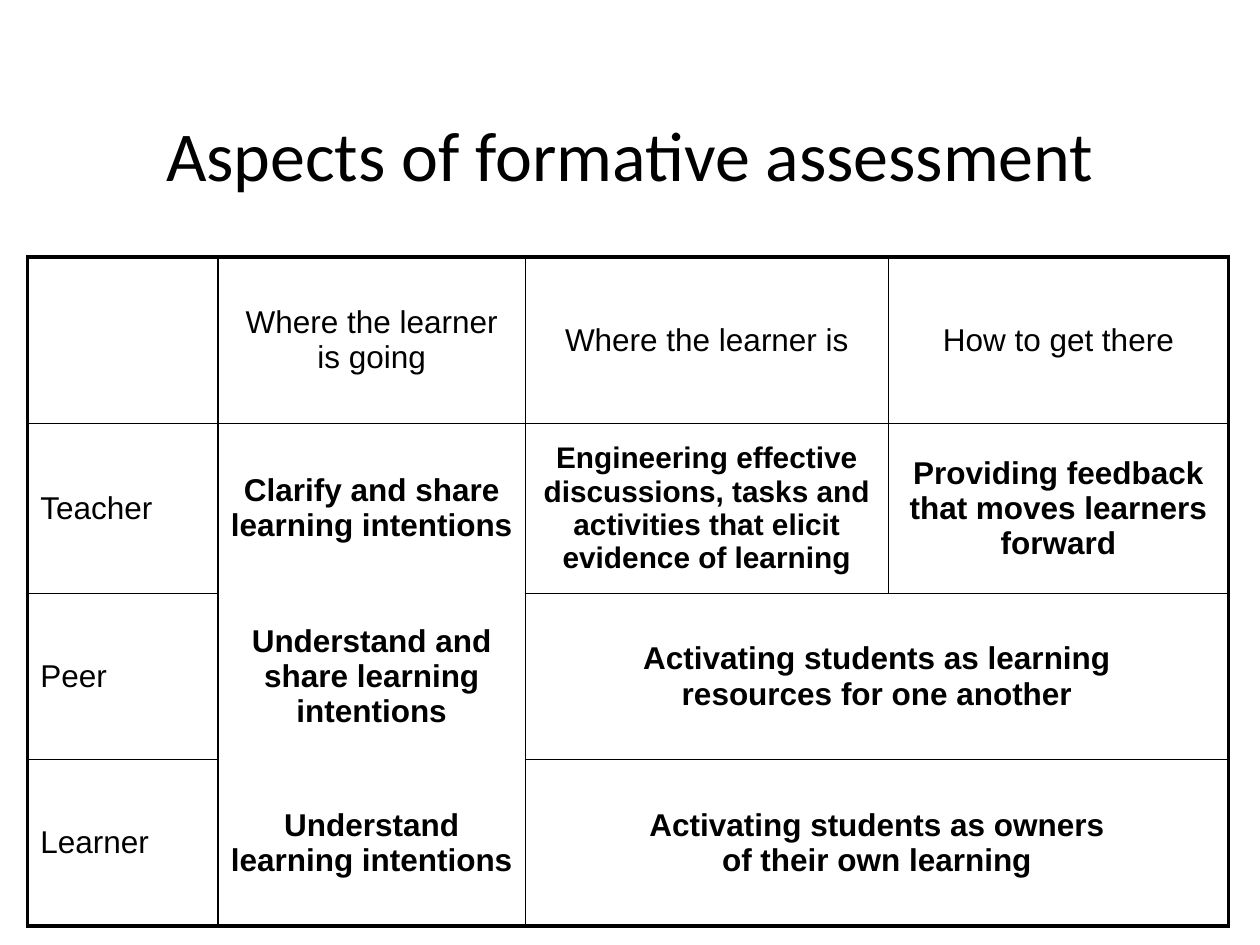
from lxml.etree import SubElement
from pptx import Presentation
from pptx.dml.color import RGBColor
from pptx.enum.text import MSO_ANCHOR as Anchor, PP_ALIGN as Align
from pptx.oxml.ns import qn
from pptx.util import Inches, Pt

BLACK, WHITE = "000000", "FFFFFF"
OUTER, INNER = 2.25, 1
COLUMN_WIDTHS = [1.51, 2.44, 2.88, 2.7]
ROW_HEIGHTS = [1.32, 1.35, 1.32, 1.32]
INTENTIONS_COLUMN = 1

# Each cell holds paragraphs; "\n" is a line break inside one paragraph
ASPECTS = [
    [[], ["Where the learner is going"], ["Where the learner is"],
     ["How to get there"]],
    [["Teacher"], ["Clarify and share learning intentions"],
     ["Engineering effective discussions, tasks and activities that elicit "
      "evidence of learning"],
     ["Providing feedback that moves learners forward"]],
    [["Peer"], ["Understand and share learning intentions"],
     ["Activating students as learning", "resources for one another"], []],
    [["Learner"], ["Understand learning intentions"],
     ["Activating students as owners\nof their own learning"], []],
]
WIDE_ROWS = (2, 3)


def color(hex_value):
    return RGBColor.from_string(hex_value)


def write(frame, paragraphs, font, size, bold=False, align=Align.CENTER):
    for i, words in enumerate(paragraphs):
        paragraph = frame.paragraphs[0] if i == 0 else frame.add_paragraph()
        paragraph.alignment = align
        for j, line in enumerate(words.split("\n")):
            if j:
                paragraph.add_line_break()
            run = paragraph.add_run()
            run.text = line
            run.font.name, run.font.size = font, Pt(size)
            run.font.bold = bold
            run.font.color.rgb = color(BLACK)


def set_borders(cell, widths):
    """Draw left, right, top and bottom borders; a width of 0 hides one."""
    properties = cell._tc.get_or_add_tcPr()
    for position, (side, width) in enumerate(zip("LRTB", widths)):
        line = SubElement(properties, qn(f"a:ln{side}"), w=str(Pt(width)))
        if width:
            fill = SubElement(line, qn("a:solidFill"))
            SubElement(fill, qn("a:srgbClr"), val=BLACK)
        else:
            SubElement(line, qn("a:noFill"))
        properties.insert(position, line)


def border_widths(row, column, last_column):
    last_row = len(ROW_HEIGHTS) - 1
    open_column = column == INTENTIONS_COLUMN
    top = OUTER if row == 0 else 0 if open_column and row > 1 else INNER
    bottom = OUTER if row == last_row else 0 if open_column and row else INNER
    left = OUTER if column == 0 else INNER
    right = OUTER if last_column == len(COLUMN_WIDTHS) - 1 else INNER
    return left, right, top, bottom


def add_title(slide, left, top, width, height):
    frame = slide.shapes.add_textbox(
        Inches(left), Inches(top), Inches(width), Inches(height)).text_frame
    frame.word_wrap = True
    frame.vertical_anchor = Anchor.MIDDLE
    write(frame, ["Aspects of formative assessment"], "Calibri", 40)


def add_aspects_table(slide, left, top, width, height):
    table = slide.shapes.add_table(
        len(ROW_HEIGHTS), len(COLUMN_WIDTHS), Inches(left), Inches(top),
        Inches(width), Inches(height)).table
    table.first_row = table.horz_banding = False
    for column, column_width in zip(table.columns, COLUMN_WIDTHS):
        column.width = Inches(column_width)
    for row, row_height in zip(table.rows, ROW_HEIGHTS):
        row.height = Inches(row_height)

    # Peer and learner activities span the last two columns
    for r in WIDE_ROWS:
        table.cell(r, 2).merge(table.cell(r, 3))

    for r, row_texts in enumerate(ASPECTS):
        for c, paragraphs in enumerate(row_texts):
            cell = table.cell(r, c)
            cell.vertical_anchor = Anchor.MIDDLE
            cell.fill.solid()
            cell.fill.fore_color.rgb = color(WHITE)
            last_column = c + cell.span_width - 1 if cell.is_merge_origin else c
            set_borders(cell, border_widths(r, c, last_column))
            write(cell.text_frame, paragraphs, "Arial",
                  size=17 if (r, c) == (1, 2) else 18,
                  bold=r > 0 and c > 0,
                  align=Align.CENTER if c else Align.LEFT)


def main():
    deck = Presentation()
    deck.slide_width, deck.slide_height = Inches(10), Inches(7.5)
    slide = deck.slides.add_slide(deck.slide_layouts[6])
    add_title(slide, 0, 0.84, 10, 0.75)
    add_aspects_table(slide, 0.22, 2.04, sum(COLUMN_WIDTHS), sum(ROW_HEIGHTS))
    deck.save("out.pptx")


if __name__ == "__main__":
    main()
